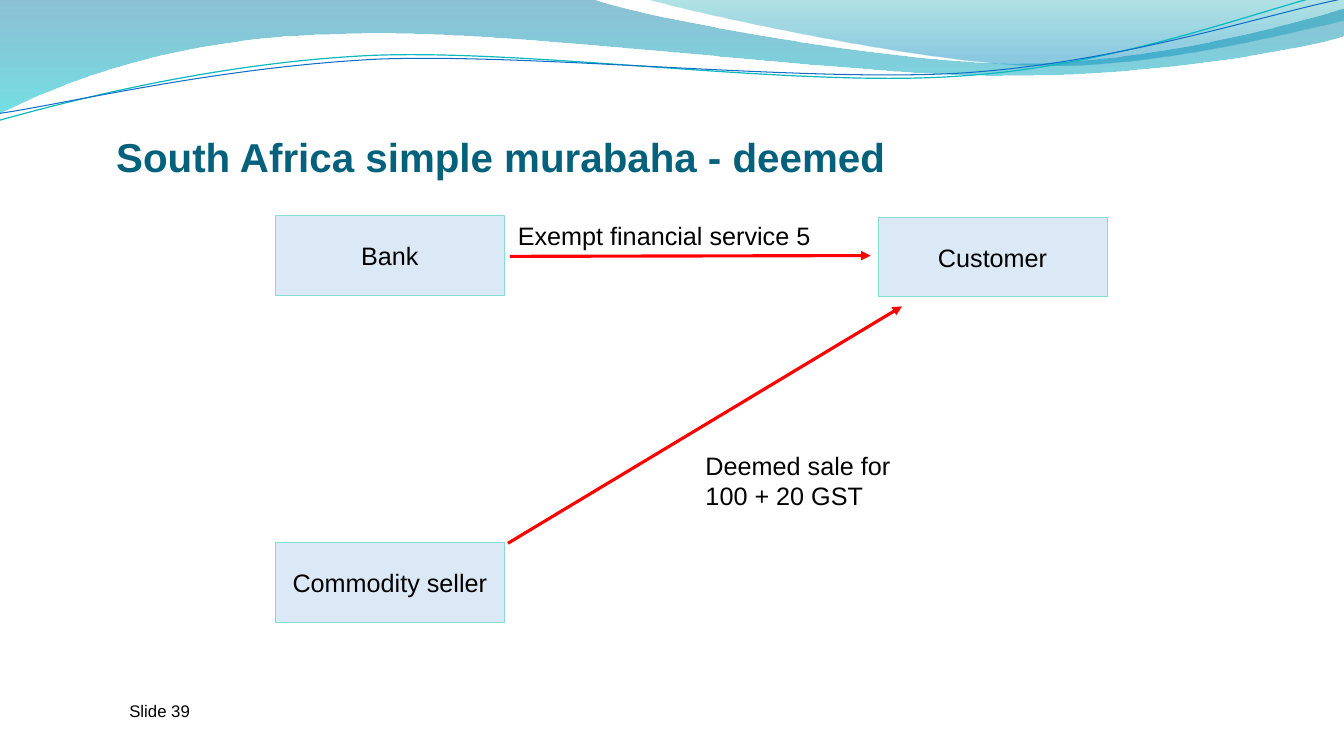
from lxml import etree
from pptx import Presentation
from pptx.dml.color import RGBColor
from pptx.enum.shapes import MSO_CONNECTOR, MSO_SHAPE
from pptx.enum.text import MSO_ANCHOR, PP_ALIGN
from pptx.oxml import parse_xml
from pptx.oxml.ns import qn
from pptx.util import Cm, Pt

STRAIGHT = MSO_CONNECTOR.STRAIGHT
RECTANGLE = MSO_SHAPE.RECTANGLE
TOP, MIDDLE, BOTTOM = MSO_ANCHOR.TOP, MSO_ANCHOR.MIDDLE, MSO_ANCHOR.BOTTOM
LEFT, CENTER = PP_ALIGN.LEFT, PP_ALIGN.CENTER
NAMESPACE = "http://schemas.openxmlformats.org/drawingml/2006/main"
INCH = 2.54


def color(value):
    return RGBColor.from_string(value)


def write_text(shape, text, size=18, ink="000000", bold=False, align=LEFT,
               anchor=TOP, wrap=True, margins=(0.25, 0.13, 0.25, 0.13)):
    frame = shape.text_frame
    left, top, right, bottom = [Cm(margin) for margin in margins]
    layout = {"word_wrap": wrap, "vertical_anchor": anchor, "margin_left": left,
              "margin_top": top, "margin_right": right, "margin_bottom": bottom}
    for name, value in layout.items():
        setattr(frame, name, value)
    para = frame.paragraphs[0]
    para.alignment = align
    span = para.add_run()
    span.text = text
    for name, value in {"name": "Arial", "size": Pt(size), "bold": bold}.items():
        setattr(span.font, name, value)
    span.font.color.rgb = color(ink)


deck = Presentation()
deck.slide_width, deck.slide_height = Cm(33.87), Cm(19.05)
page = deck.slides.add_slide(deck.slide_layouts[6])

waves = [
    {"start": (0, 0),
     "parts": [(5.87, -0.01), (6.34, 0.17, 8.85, 0.63, 10.11, 0.63),
               (11.38, 0.63, 12.78, 0.26, 13.33, 0.09), (13.35, 0.36),
               (13.11, 0.44, 11.6, 0.76, 9.94, 0.75),
               (8.29, 0.75, 5.09, 0.28, 3.43, 0.34),
               (1.72, 0.36, 0.61, 0.83, -0.01, 1.13), (0, 0)],
     "stops": [(0, "0074A1", 45), (100, "00C6CF", 55)]},
    {"start": (6.39, -0.01),
     "parts": [(6.79, 0.11, 9.09, 0.62, 10.25, 0.65),
               (11.41, 0.69, 12.82, 0.32, 13.33, 0.21), (13.33, 0), (6.39, -0.01)],
     "stops": [(0, "00A1A9", 30), (80, "008BBF", 45)]},
    {"start": (-0.03, 0.88),
     "parts": [(0.63, 0.73, 2.11, 0.41, 3.69, 0.41),
               (5.28, 0.42, 7.88, 0.93, 9.49, 0.89),
               (11.09, 0.87, 12.54, 0.36, 13.33, 0.22)],
     "line": ("0AB8BF", 0.85)},
    {"start": (-0.02, 0.81),
     "parts": [(0.62, 0.75, 2.18, 0.45, 3.78, 0.45),
               (5.37, 0.47, 7.95, 0.88, 9.54, 0.86),
               (11.14, 0.83, 12.56, 0.42, 13.36, 0.3)],
     "line": ("0F6FC6", 0.75)},
]
for wave in waves:
    points = [(Cm(x * INCH), Cm(y * INCH)) for part in [wave["start"], *wave["parts"]]
              for x, y in zip(part[::2], part[1::2])]
    builder = page.shapes.build_freeform(*points[0])
    builder.add_line_segments(points[1:], close="stops" in wave)
    shape = builder.convert_to_shape()
    segments = iter(list(shape._element.iter(qn("a:lnTo"))))
    for part in wave["parts"]:
        segment = next(segments)
        if len(part) == 6:
            curve = etree.Element(qn("a:cubicBezTo"))
            segment.addprevious(curve)
            for corner in [segment, next(segments), next(segments)]:
                curve.append(corner[0])
                corner.getparent().remove(corner)
    shape.shadow.inherit = False
    shape.fill.background()
    if "line" in wave:
        ink, width = wave["line"]
        shape.line.color.rgb = color(ink)
        shape.line.width = Pt(width)
        shape.rotation = 357.3
        continue
    shape.line.fill.background()
    stops = "".join(
        f'<a:gs pos="{place * 1000}"><a:srgbClr val="{ink}">'
        f'<a:alpha val="{opacity * 1000}"/></a:srgbClr></a:gs>'
        for place, ink, opacity in wave["stops"])
    gradient = parse_xml(f'<a:gradFill xmlns:a="{NAMESPACE}"><a:gsLst>{stops}</a:gsLst>'
                         '<a:lin ang="5400000" scaled="0"/></a:gradFill>')
    properties = shape.fill._xPr
    properties.replace(properties.find(qn("a:noFill")), gradient)

title = page.shapes.add_textbox(Cm(2.93), Cm(2.44), Cm(20.17), Cm(2.11))
write_text(title, "South Africa simple murabaha - deemed", size=28.8, ink="04617B",
           bold=True, anchor=BOTTOM, margins=(0, 0.13, 0, 0))

parties = [("Bank", 6.94, 5.43), ("Commodity seller", 6.94, 13.68),
           ("Customer", 22.13, 5.47)]
for name, left, top in parties:
    box = page.shapes.add_shape(RECTANGLE, Cm(left), Cm(top), Cm(5.77), Cm(2.01))
    box.shadow.inherit = False
    box.fill.solid()
    box.fill.fore_color.rgb = color("0F6FC6")
    tint = box.fill._xPr.find(qn("a:solidFill"))[0]
    etree.SubElement(tint, qn("a:alpha"), val="15000")
    box.line.color.rgb = color("85DFD0")
    box.line.width = Pt(0.75)
    write_text(box, name, align=CENTER, anchor=MIDDLE, wrap=False,
               margins=(0.18, 0, 0.18, 0))

arrows = [(12.8, 13.69, 22.73, 7.72), (12.85, 6.46, 21.94, 6.44)]
for ends in arrows:
    arrow = page.shapes.add_connector(STRAIGHT, *[Cm(end) for end in ends])
    arrow.line.color.rgb = color("FF0000")
    arrow.line.width = Pt(2.25)
    etree.SubElement(arrow.line._get_or_add_ln(), qn("a:tailEnd"), type="triangle")
    etree.SubElement(arrow._element.spPr, qn("a:effectLst"))

labels = [("Slide 39", 12, 3.01, 17.53, 5.92, 1.02),
          ("Deemed sale for 100 + 20 GST", 18, 17.53, 11.22, 5.87, 1.8),
          ("Exempt financial service 5", 18, 12.8, 5.42, 8.28, 1.02)]
for text, size, *frame in labels:
    label = page.shapes.add_textbox(*[Cm(length) for length in frame])
    write_text(label, text, size=size)

deck.save("out.pptx")
